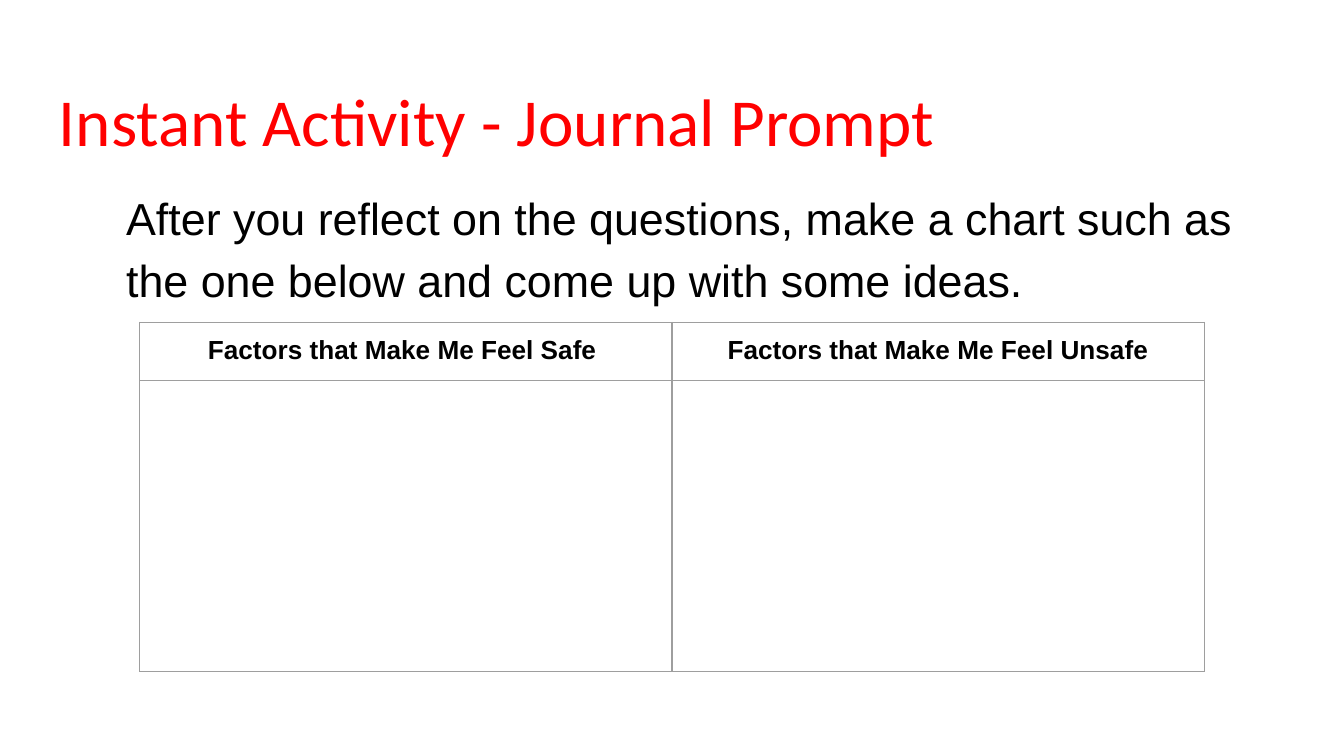
import pptx
import pptx.util
import pptx.dml.color
import pptx.enum.text
import pptx.oxml
import pptx.oxml.ns
from pptx.util import Inches

SLIDE_WIDTH = 10
SLIDE_HEIGHT = SLIDE_WIDTH * 9 / 16
TITLE = "Instant Activity - Journal Prompt"
PROMPT = ("After you reflect on the questions, make a chart such as "
          "the one below and come up with some ideas.")
HEADINGS = ["Factors that Make Me Feel Safe ", "Factors that Make Me Feel Unsafe"]
ROW_HEIGHTS = [0.42, 2.16]
COLUMN_WIDTH = 3.96
TABLE_LEFT, TABLE_TOP = 1.04, 2.4
TEXT_LEFT, TEXT_WIDTH = 0.34, 9.32
INSET = 0.1
BORDER_COLOR, BORDER_WIDTH = "9E9E9E", 0.75


def color(value):
    return pptx.dml.color.RGBColor.from_string(value)


def style(para, name, size, value, bold=False):
    para.font.name = name
    para.font.size = pptx.util.Pt(size)
    para.font.color.rgb = color(value)
    para.font.bold = bold


def set_insets(holder):
    for side in ("left", "top", "right", "bottom"):
        setattr(holder, f"margin_{side}", Inches(INSET))


def add_text(page, text, top, height):
    box = page.shapes.add_textbox(
        Inches(TEXT_LEFT), Inches(top), Inches(TEXT_WIDTH), Inches(height))
    frame = box.text_frame
    frame.word_wrap = True
    set_insets(frame)
    para = frame.paragraphs[0]
    para.text = text
    return para


def add_borders(cell):
    properties = cell._tc.get_or_add_tcPr()
    for index, side in enumerate(("lnL", "lnR", "lnT", "lnB")):
        line = pptx.oxml.parse_xml(
            f'<a:{side} {pptx.oxml.ns.nsdecls("a")} w="{pptx.util.Pt(BORDER_WIDTH)}">'
            f'<a:solidFill><a:srgbClr val="{BORDER_COLOR}"/></a:solidFill></a:{side}>')
        properties.insert(index, line)


def add_factor_table(page):
    frame = page.shapes.add_table(
        len(ROW_HEIGHTS), len(HEADINGS), Inches(TABLE_LEFT), Inches(TABLE_TOP),
        Inches(COLUMN_WIDTH * len(HEADINGS)), Inches(sum(ROW_HEIGHTS)))
    table = frame.table
    table.first_row = False
    table.horz_banding = False
    for row, height in zip(table.rows, ROW_HEIGHTS):
        row.height = Inches(height)
    for column in table.columns:
        column.width = Inches(COLUMN_WIDTH)
    for cell in table.iter_cells():
        cell.fill.background()
        set_insets(cell)
        add_borders(cell)
    for index, heading in enumerate(HEADINGS):
        para = table.cell(0, index).text_frame.paragraphs[0]
        para.text = heading
        para.alignment = pptx.enum.text.PP_ALIGN.CENTER
        style(para, "Arial", 14, "000000", bold=True)


def main():
    deck = pptx.Presentation()
    deck.slide_width = Inches(SLIDE_WIDTH)
    deck.slide_height = Inches(SLIDE_HEIGHT)
    page = deck.slides.add_slide(deck.slide_layouts[6])

    title = add_text(page, TITLE, 0.49, 0.63)
    style(title, "Calibri", 36, "FF0000")

    prompt = add_text(page, PROMPT, 1.26, 3.74)
    style(prompt, "Arial", 24, "000000")
    prompt.line_spacing = 1.15
    prompt._p.get_or_add_pPr().set("marL", str(Inches(0.5)))

    add_factor_table(page)
    deck.save("out.pptx")


if __name__ == "__main__":
    main()
